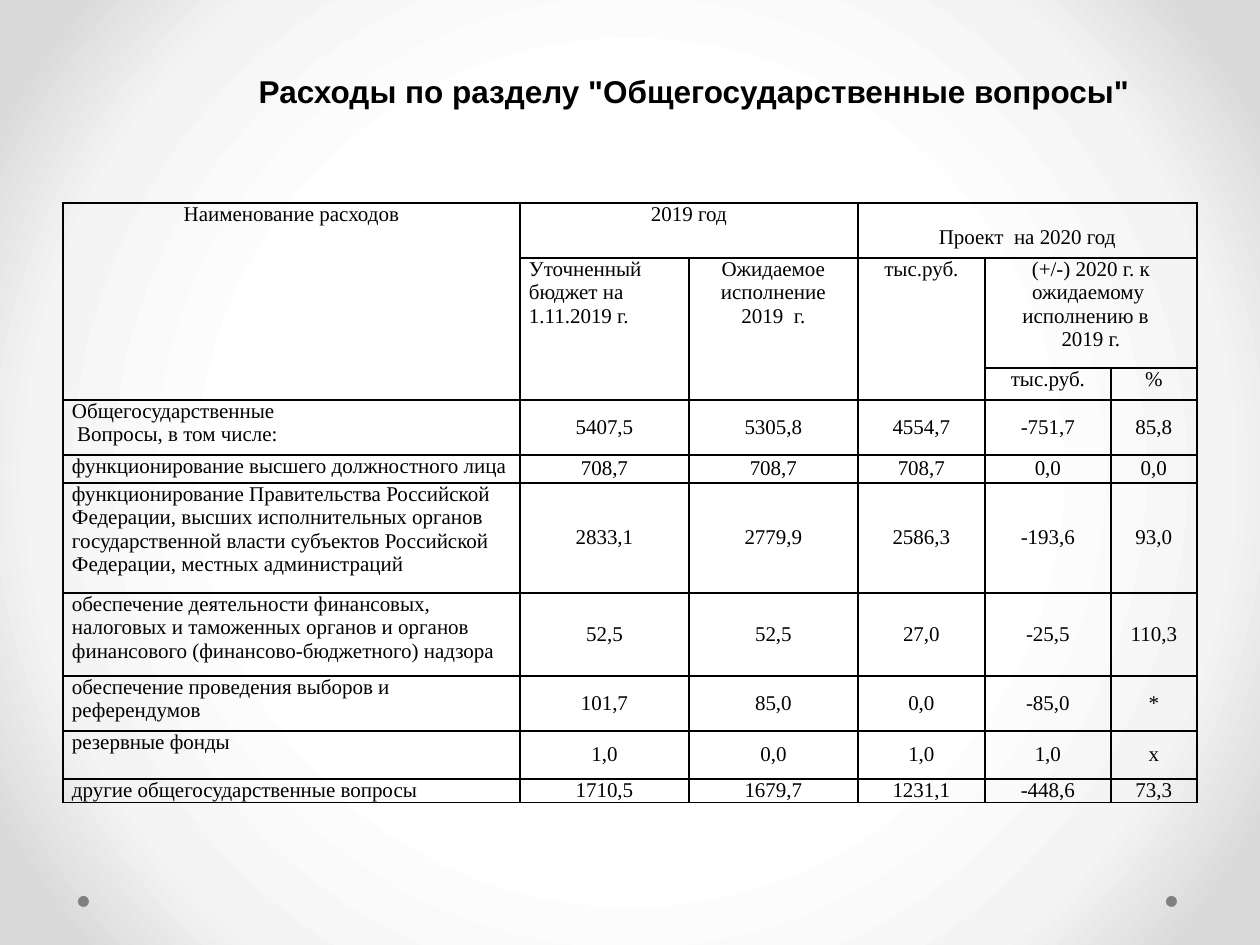
from pptx import Presentation
from pptx.dml.color import RGBColor
from pptx.enum.shapes import MSO_SHAPE
from pptx.enum.text import MSO_ANCHOR, PP_ALIGN
from pptx.oxml import parse_xml
from pptx.oxml.ns import nsdecls
from pptx.util import Pt

SCALE = 914400 / 126
INK = "000000"
COLS = [457, 169, 169, 127, 126, 86]
ROWS = [55, 110, 32, 55, 28, 110, 83, 55, 48, 24]

# Heading cells: row, column, rows spanned, columns spanned, lines
HEADS = [
    (0, 0, 3, 1, ["Наименование расходов"]),
    (0, 1, 1, 2, ["2019 год"]),
    (0, 3, 1, 3, ["Проект  на 2020 год"]),
    (1, 1, 2, 1, ["Уточненный бюджет на 1.11.2019 г."]),
    (1, 2, 2, 1, ["Ожидаемое", "исполнение", "2019  г."]),
    (1, 3, 2, 1, ["тыс.руб."]),
    (1, 4, 1, 2, ["(+/-) 2020 г. к ожидаемому ", "исполнению в  ", "2019 г."]),
    (2, 4, 1, 1, ["тыс.руб."]),
    (2, 5, 1, 1, ["%"]),
]
COSTS = [
    (["Общегосударственные", " Вопросы, в том числе:"],
     ["5407,5", "5305,8", "4554,7", "-751,7", "85,8"]),
    (["функционирование высшего должностного лица"],
     ["708,7", "708,7", "708,7", "0,0", "0,0"]),
    (["функционирование Правительства Российской Федерации, высших "
      "исполнительных органов государственной власти субъектов Российской "
      "Федерации, местных администраций"],
     ["2833,1", "2779,9", "2586,3", "-193,6", "93,0"]),
    (["обеспечение деятельности финансовых, налоговых и таможенных органов "
      "и органов финансового (финансово-бюджетного) надзора"],
     ["52,5", "52,5", "27,0", "-25,5", "110,3"]),
    (["обеспечение проведения выборов и референдумов"],
     ["101,7", "85,0", "0,0", "-85,0", "*"]),
    (["резервные фонды"], ["1,0", "0,0", "1,0", "1,0", "х"]),
    (["другие общегосударственные вопросы"],
     ["1710,5", "1679,7", "1231,1", "-448,6", "73,3"]),
]


def px(n):
    return round(n * SCALE)


def color(code):
    return RGBColor.from_string(code)


def add_run(para, text, font, size, bold=False):
    run = para.add_run()
    run.text = text
    run.font.name, run.font.size, run.font.bold = font, Pt(size), bold
    run.font.color.rgb = color(INK)


def paint_back(slide):
    stops = "".join(
        f'<a:gs pos="{pos}000"><a:srgbClr val="{code}"/></a:gs>'
        for pos, code in [(50, "FFFFFF"), (76, "F4F4F4"), (92, "DADADA")])
    grad = parse_xml(
        f'<a:gradFill {nsdecls("a")} rotWithShape="1"><a:gsLst>{stops}</a:gsLst>'
        '<a:path path="circle"><a:fillToRect l="50000" t="50000" r="50000" '
        'b="50000"/></a:path></a:gradFill>')
    back = slide.element.cSld.get_or_add_bgPr()
    back.replace(back[0], grad)


def add_dots(slide, x, y, w, size):
    for left in (x, x + w - size):
        dot = slide.shapes.add_shape(
            MSO_SHAPE.OVAL, px(left), px(y), px(size), px(size))
        dot.shadow.inherit = False
        dot.fill.solid()
        dot.fill.fore_color.rgb = color("808080")
        dot.line.fill.background()


def set_title(slide, x, y, w, h):
    title = slide.shapes.title
    title.left, title.top, title.width, title.height = map(px, (x, y, w, h))
    frame = title.text_frame
    frame.word_wrap = True
    frame.vertical_anchor = MSO_ANCHOR.BOTTOM
    frame.margin_left, frame.margin_right = px(138), px(12)
    frame.margin_top = frame.margin_bottom = px(6)
    para = frame.paragraphs[0]
    para.alignment = PP_ALIGN.CENTER
    add_run(para, 'Расходы по разделу "Общегосударственные вопросы"',
            "Arial", 18, True)


def add_border(cell):
    props = cell._tc.get_or_add_tcPr()
    for n, side in enumerate(("lnL", "lnR", "lnT", "lnB")):
        props.insert(n, parse_xml(
            f'<a:{side} {nsdecls("a")} w="{Pt(1)}"><a:solidFill>'
            f'<a:srgbClr val="{INK}"/></a:solidFill></a:{side}>'))


def fill_cell(cell, lines, align=PP_ALIGN.CENTER, anchor=MSO_ANCHOR.TOP):
    cell.vertical_anchor = anchor
    frame = cell.text_frame
    for n, line in enumerate(lines):
        para = frame.add_paragraph() if n else frame.paragraphs[0]
        para.alignment = align
        add_run(para, line, "Times New Roman", 12)


def add_costs(slide, x, y):
    table = slide.shapes.add_table(
        len(ROWS), len(COLS), px(x), px(y), px(sum(COLS)), px(sum(ROWS))).table
    table.first_row = table.horz_banding = False
    for col, wide in zip(table.columns, COLS):
        col.width = px(wide)
    for row, high in zip(table.rows, ROWS):
        row.height = px(high)
    for cell in table.iter_cells():
        cell.fill.background()
        cell.margin_left = cell.margin_right = px(9)
        cell.margin_top = cell.margin_bottom = 0
        add_border(cell)

    # Headings
    for r, c, down, across, lines in HEADS:
        cell = table.cell(r, c)
        if down * across > 1:
            cell.merge(table.cell(r + down - 1, c + across - 1))
        left = (r, c) == (1, 1)
        fill_cell(cell, lines, PP_ALIGN.LEFT if left else PP_ALIGN.CENTER)
    table.cell(0, 3).margin_top = px(23)

    # Expense rows
    for r, (name, values) in enumerate(COSTS, 3):
        fill_cell(table.cell(r, 0), name, PP_ALIGN.LEFT)
        for c, value in enumerate(values, 1):
            fill_cell(table.cell(r, c), [value], anchor=MSO_ANCHOR.MIDDLE)


def main():
    deck = Presentation()
    deck.slide_width, deck.slide_height = px(1260), px(945)
    slide = deck.slides.add_slide(deck.slide_layouts[5])
    paint_back(slide)
    add_dots(slide, 78, 896, 1099, 11)
    set_title(slide, 64, 37, 1134, 79)
    add_costs(slide, 63, 203)
    deck.save("out.pptx")


if __name__ == "__main__":
    main()
